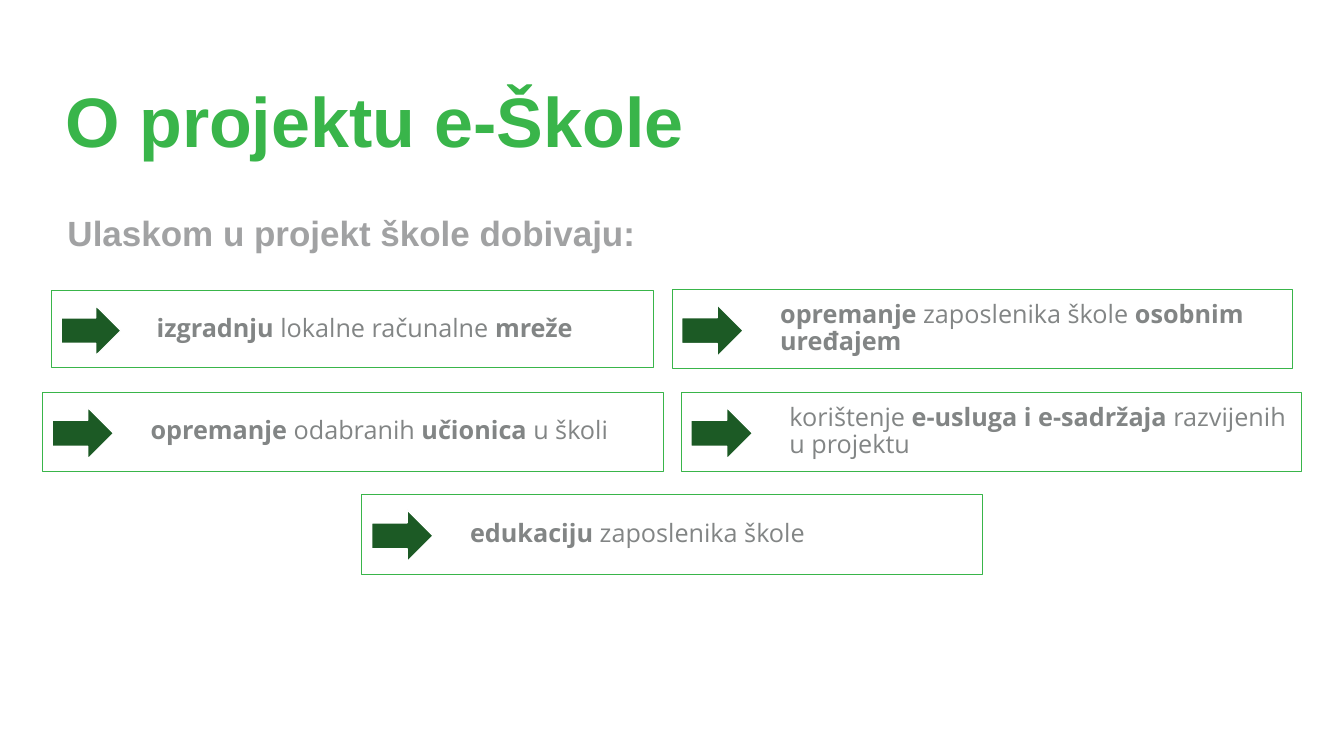
from lxml import etree
from pptx import Presentation
from pptx.dml.color import RGBColor
from pptx.enum.shapes import MSO_SHAPE
from pptx.enum.text import MSO_ANCHOR, MSO_AUTO_SIZE, PP_ALIGN
from pptx.oxml.ns import qn
from pptx.util import Cm, Pt

RECTANGLE, RIGHT_ARROW = MSO_SHAPE.RECTANGLE, MSO_SHAPE.RIGHT_ARROW
TOP, MIDDLE, BOTTOM = MSO_ANCHOR.TOP, MSO_ANCHOR.MIDDLE, MSO_ANCHOR.BOTTOM
NO_AUTOFIT = MSO_AUTO_SIZE.NONE
LEFT = PP_ALIGN.LEFT

GREEN = RGBColor(0x39, 0xB5, 0x4A)
DARK_GREEN = RGBColor(0x1C, 0x5A, 0x25)
GREY = RGBColor(0x82, 0x85, 0x85)
LIGHT_GREY = RGBColor(0xA1, 0xA2, 0xA3)
WHITE = RGBColor(0xFF, 0xFF, 0xFF)

TITLE = "O projektu e-Škole"
SUBTITLE = "Ulaskom u projekt škole dobivaju:"

# Each benefit is a list of (text, bold) runs.
NETWORK = [("izgradnju", True), (" lokalne računalne ", False), ("mreže", True)]
DEVICES = [("opremanje", True), (" zaposlenika škole ", False),
           ("osobnim uređajem", True)]
CLASSROOMS = [("opremanje", True), (" odabranih ", False),
              ("učionica", True), (" u školi", False)]
SERVICES = [("korištenje ", False), ("e-usluga i e-sadržaja ", True),
            ("razvijenih u projektu", False)]
TRAINING = [("edukaciju", True), (" zaposlenika škole", False)]

# Rows of (benefit, scale of its box).
BENEFIT_ROWS = [
    [(NETWORK, 0.97), (DEVICES, 1)],
    [(CLASSROOMS, 1), (SERVICES, 1)],
    [(TRAINING, 1)],
]

# Lengths in centimetres.
SLIDE_WIDTH, SLIDE_HEIGHT = 67.72, 38.1
BOX_WIDTH, BOX_HEIGHT = 31.27, 4.01
COLUMN_GAP = 0.92
FIRST_ROW_CENTRE, ROW_PITCH = 16.58, 5.17
ARROW_LEFT, ARROW_TOP = 0.5, 0.78
ARROW_WIDTH, ARROW_HEIGHT = 3.1, 2.62
TEXT_INDENT, BOX_INSET = 5.46, 0.38


def write_text(shape, runs, *, font, size, color, anchor, insets,
               line_spacing=1.0):
    """Fill a shape with one paragraph of (text, bold) runs; insets in cm."""
    frame = shape.text_frame
    frame.word_wrap = True
    frame.auto_size = NO_AUTOFIT
    frame.vertical_anchor = anchor
    (frame.margin_left, frame.margin_top,
     frame.margin_right, frame.margin_bottom) = map(Cm, insets)
    paragraph = frame.paragraphs[0]
    paragraph.alignment = LEFT
    paragraph.line_spacing = line_spacing
    paragraph.space_before = Pt(0)
    for text, bold in runs:
        run = paragraph.add_run()
        run.text = text
        run.font.name = font
        run.font.size = Pt(size)
        run.font.bold = bold
        run.font.color.rgb = color


def place(shape, left, top, width, height):
    shape.left, shape.top = Cm(left), Cm(top)
    shape.width, shape.height = Cm(width), Cm(height)


def add_filled_shape(slide, kind, position, fill, line, line_width):
    shape = slide.shapes.add_shape(kind, *map(Cm, position))
    shape.shadow.inherit = False
    shape.fill.solid()
    shape.fill.fore_color.rgb = fill
    shape.line.color.rgb = line
    shape.line.width = Pt(line_width)
    return shape


def set_opacity(shape, percent):
    color = shape.fill._xPr.find(qn("a:solidFill"))[0]
    etree.SubElement(color, qn("a:alpha")).set("val", str(percent * 1000))


def add_benefit(slide, runs, left, centre, scale):
    """Add a box with its arrow, centred vertically on the row."""
    width, height = BOX_WIDTH * scale, BOX_HEIGHT * scale
    top = centre - height / 2
    box = add_filled_shape(slide, RECTANGLE, (left, top, width, height),
                           WHITE, GREEN, 0.75)
    set_opacity(box, 40)
    write_text(box, runs, font="Open Sans", size=36, color=GREY, anchor=MIDDLE,
               insets=(TEXT_INDENT * scale, BOX_INSET, BOX_INSET, BOX_INSET),
               line_spacing=0.9)
    arrow = (left + ARROW_LEFT * scale, top + ARROW_TOP * scale,
             ARROW_WIDTH * scale, ARROW_HEIGHT * scale)
    add_filled_shape(slide, RIGHT_ARROW, arrow, DARK_GREEN, WHITE, 2)


def main():
    presentation = Presentation()
    presentation.slide_width = Cm(SLIDE_WIDTH)
    presentation.slide_height = Cm(SLIDE_HEIGHT)
    slide = presentation.slides.add_slide(presentation.slide_layouts[0])

    heading_style = {"font": "Arial", "insets": (0.25, 0.13, 0.25, 0.13)}
    title, subtitle = slide.placeholders
    place(title, 3.05, 3.86, 61.6, 4.39)
    write_text(title, [(TITLE, True)], size=100, color=GREEN, anchor=BOTTOM,
               **heading_style)
    place(subtitle, 3.15, 9.45, 61.42, 21.36)
    write_text(subtitle, [(SUBTITLE, True)], size=50, color=LIGHT_GREY,
               anchor=TOP, line_spacing=1.5, **heading_style)

    for row_index, row in enumerate(BENEFIT_ROWS):
        row_width = (sum(BOX_WIDTH * scale for _, scale in row)
                     + COLUMN_GAP * (len(row) - 1))
        left = (SLIDE_WIDTH - row_width) / 2
        centre = FIRST_ROW_CENTRE + row_index * ROW_PITCH
        for runs, scale in row:
            add_benefit(slide, runs, left, centre, scale)
            left += BOX_WIDTH * scale + COLUMN_GAP

    presentation.save("out.pptx")


if __name__ == "__main__":
    main()
